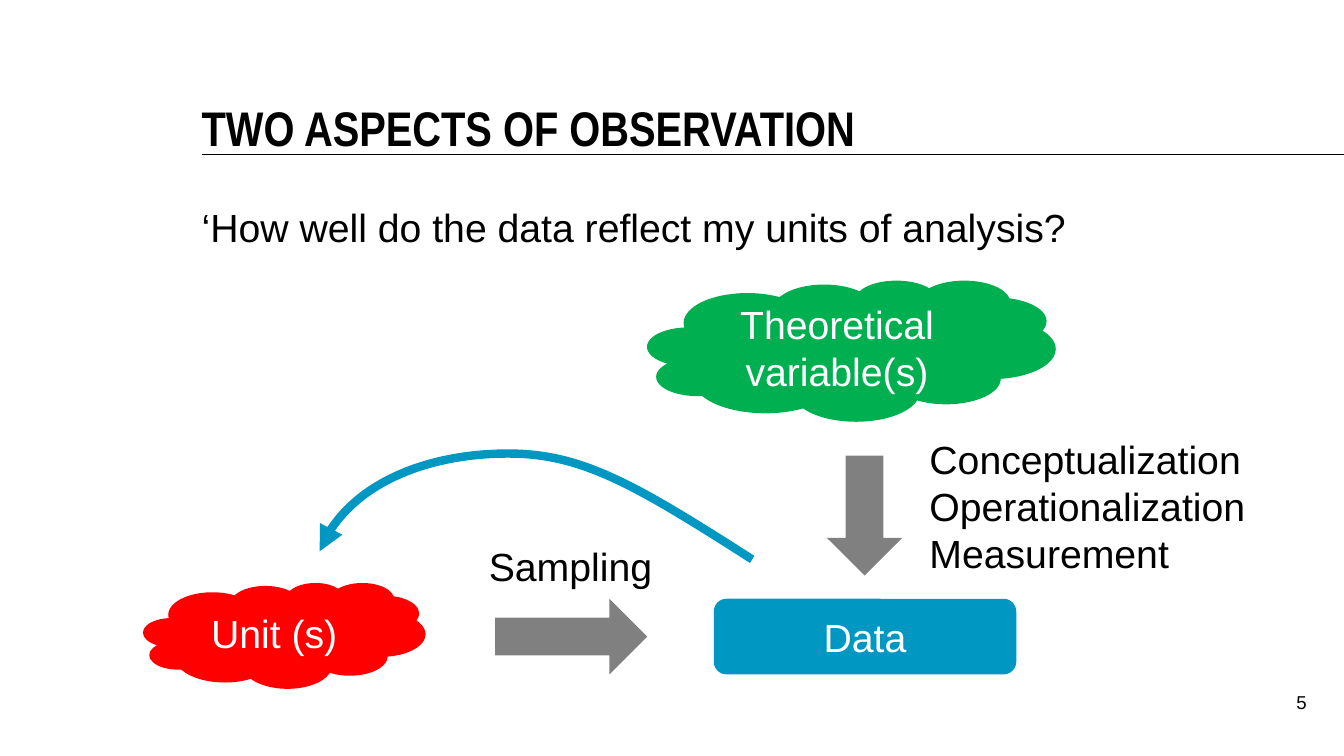
from lxml import etree
from pptx import Presentation
from pptx.dml.color import RGBColor
from pptx.enum import shapes, text
from pptx.oxml import ns
from pptx.util import Inches, Pt

HUES = {"black": "000000", "white": "FFFFFF", "blue": "0098C3",
        "grey": "808080", "green": "00B050", "red": "FF0000"}
KIND = shapes.MSO_SHAPE
ALIGN = text.PP_ALIGN
ANCHOR = text.MSO_ANCHOR


def hue(name):
    return RGBColor.from_string(HUES[name])


def write(frame, lines, size=28, font="Arial", color="black",
          align=ALIGN.LEFT, bold=False, pitch=None):
    """Fill a text frame, one paragraph per line; pitch is in points."""
    for i, line in enumerate(lines):
        para = frame.paragraphs[0] if i == 0 else frame.add_paragraph()
        para.alignment = align
        if pitch:
            para.line_spacing = Pt(pitch)
        run = para.add_run()
        run.text = line
        run.font.size = Pt(size)
        run.font.name = font
        run.font.bold = bold
        run.font.color.rgb = hue(color)


deck = Presentation()
deck.slide_width = Inches(13.33)
deck.slide_height = Inches(7.5)
slide = deck.slides.add_slide(deck.slide_layouts[6])
items = slide.shapes

# Rule under the title
rule = items.add_connector(shapes.MSO_CONNECTOR.STRAIGHT, Inches(2),
                           Inches(1.53), Inches(13.33), Inches(1.53))
rule.line.color.rgb = hue("black")
rule.line.width = Pt(1)
etree.SubElement(rule._element.spPr, ns.qn("a:effectLst"))

# Text boxes: place, margins, wrap, anchor, lines, style
boxes = [
    ((2, 0.75, 10.92, 0.8), (0, 0, 0, 0), True, ANCHOR.BOTTOM,
     ["TWO ASPECTS OF OBSERVATION"],
     {"size": 34.7, "font": "Arial Narrow", "bold": True, "pitch": 33.3}),
    ((2, 1.97, 10.95, 1.19), (0, 0.05, 0.1, 0.05), True, ANCHOR.TOP,
     ["‘How well do the data reflect my units of analysis?"],
     {"pitch": 33.3}),
    ((12.41, 6.75, 0.55, 0.52), (0.1, 0.05, 0, 0.05), True, ANCHOR.TOP,
     ["5"], {"size": 13.3, "align": ALIGN.RIGHT, "pitch": 20}),
    ((4.75, 5.33, 1.84, 0.57), (0.1, 0.05, 0.1, 0.05), False, ANCHOR.TOP,
     ["Sampling"], {}),
    ((9.12, 4.27, 3.38, 1.51), (0.1, 0.05, 0.1, 0.05), False, ANCHOR.TOP,
     ["Conceptualization", "Operationalization", "Measurement"], {}),
]
for place, pads, wrap, anchor, lines, style in boxes:
    frame = items.add_textbox(*map(Inches, place)).text_frame
    (frame.margin_left, frame.margin_top,
     frame.margin_right, frame.margin_bottom) = map(Inches, pads)
    frame.word_wrap = wrap
    frame.vertical_anchor = anchor
    write(frame, lines, **style)

# Diagram nodes and block arrows: kind, place, turn, fill, label
nodes = [
    (KIND.ROUNDED_RECTANGLE, (7.08, 5.94, 3, 0.75), 0, "blue", "Data"),
    (KIND.RIGHT_ARROW, (4.91, 5.94, 1.51, 0.75), 0, "grey", ""),
    (KIND.RIGHT_ARROW, (7.98, 4.74, 1.19, 0.75), 90, "grey", ""),
    (KIND.CLOUD, (6.42, 2.78, 4.05, 1.4), 0, "green",
     "Theoretical variable(s)"),
    (KIND.CLOUD, (1.42, 5.78, 2.8, 1.05), 0, "red", "Unit (s)"),
]
for kind, place, turn, fill, label in nodes:
    node = items.add_shape(kind, *map(Inches, place))
    node.shadow.inherit = False
    node.rotation = turn
    node.fill.solid()
    node.fill.fore_color.rgb = hue(fill)
    node.line.fill.background()
    if label:
        node.text_frame.word_wrap = True
        node.text_frame.vertical_anchor = ANCHOR.MIDDLE
        write(node.text_frame, [label], color="white", align=ALIGN.CENTER)

# Curved arrow from the data back to the units
start, *knots = [(7.46, 5.55), (6.32, 4.82), (5.79, 4.51), (5.08, 4.5),
                 (4.36, 4.49), (3.43, 4.78), (3.17, 5.47)]
pen = items.build_freeform(Inches(start[0]), Inches(start[1]))
pen.add_line_segments([(Inches(x), Inches(y)) for x, y in knots], close=False)
curve = pen.convert_to_shape()
curve.shadow.inherit = False
curve.fill.background()
curve.line.color.rgb = hue("blue")
curve.line.width = Pt(6)

# Each three straight segments become one Bezier segment
route = curve._element.find(".//" + ns.qn("a:path"))
steps = route.findall(ns.qn("a:lnTo"))
for i in range(0, len(steps), 3):
    bend = etree.SubElement(route, ns.qn("a:cubicBezTo"))
    for step in steps[i:i + 3]:
        bend.append(step[0])
        route.remove(step)
etree.SubElement(curve.line._get_or_add_ln(), ns.qn("a:tailEnd"),
                 type="triangle")

deck.save("out.pptx")
